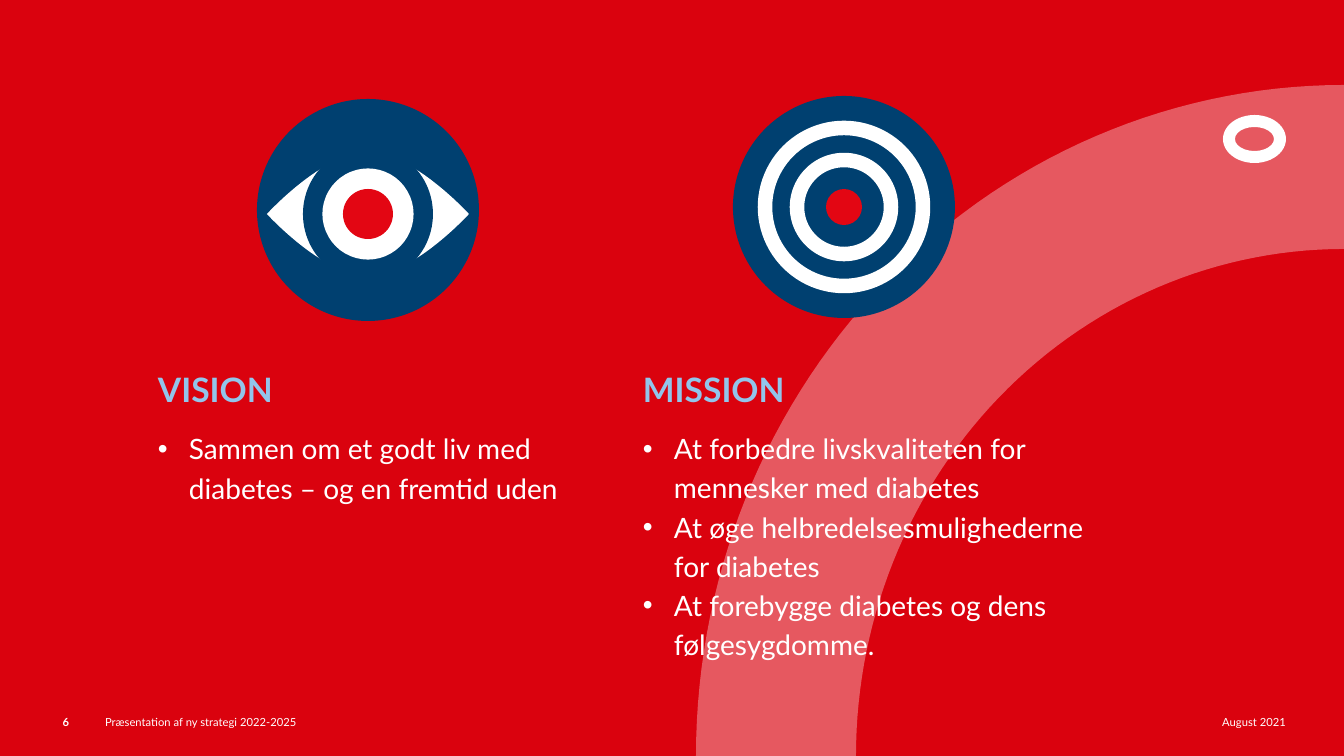
from dataclasses import dataclass
from math import cos, pi, sin

from lxml import etree
from pptx import Presentation
from pptx.dml.color import RGBColor
from pptx.enum.shapes import MSO_SHAPE
from pptx.enum.text import MSO_ANCHOR, PP_ALIGN
from pptx.oxml.ns import qn
from pptx.util import Emu, Pt

OVAL, DONUT = MSO_SHAPE.OVAL, MSO_SHAPE.DONUT
LEFT, RIGHT = PP_ALIGN.LEFT, PP_ALIGN.RIGHT
TOP = MSO_ANCHOR.TOP

EMU_PER_PX = 12192000 / 1344
WIDTH, HEIGHT = 1344, 756
FONT = "Lato"
RED, NAVY, WHITE = "DA020E", "004070", "FFFFFF"
PUPIL, SKY = "E30613", "92C5EB"
BULLET_INDENT = 31


@dataclass
class Disc:
    x: int
    y: int
    rx: int
    ry: int
    fill: str | None = None
    line: str | None = None
    weight: float = 0


@dataclass
class Column:
    x: int
    y: int
    width: int
    height: int
    title: str
    points: list[str]


@dataclass
class Footer:
    x: int
    width: int
    text: str
    align: int = LEFT
    bold: bool = False


def px(length: float) -> Emu:
    return Emu(round(length * EMU_PER_PX))


def rgb(colour: str) -> RGBColor:
    return RGBColor.from_string(colour)


def paint(shape, fill: str | None, line: str | None = None, weight: float = 0) -> None:
    shape.shadow.inherit = False
    if fill:
        shape.fill.solid()
        shape.fill.fore_color.rgb = rgb(fill)
    else:
        shape.fill.background()
    if line:
        shape.line.color.rgb = rgb(line)
        shape.line.width = Pt(weight)
    else:
        shape.line.fill.background()


def draw_disc(slide, disc: Disc) -> None:
    shape = slide.shapes.add_shape(OVAL, px(disc.x - disc.rx), px(disc.y - disc.ry),
                                   px(2 * disc.rx), px(2 * disc.ry))
    paint(shape, disc.fill, disc.line, disc.weight)


def draw_outline(slide, points: list[tuple[float, float]], fill: str):
    start, *rest = [(px(x), px(y)) for x, y in points]
    builder = slide.shapes.build_freeform(*start)
    builder.add_line_segments(rest, close=True)
    shape = builder.convert_to_shape()
    paint(shape, fill)
    return shape


def quarter_arc(rx: int, ry: int, steps: int = 60) -> list[tuple[float, float]]:
    """Arc around the bottom right corner, from the bottom edge to the right edge."""
    angles = [pi / 2 * i / steps for i in range(steps + 1)]
    return [(WIDTH - rx * cos(a), HEIGHT - ry * sin(a)) for a in angles]


def almond(x: int, y: int, rx: int, ry: int, steps: int = 24) -> list[tuple[float, float]]:
    """Eye outline: round at top and bottom, pointed at the sides."""
    pull = 0.44 * rx
    quarter = []
    for i in range(steps + 1):
        t = i / steps
        side = 3 * (1 - t) ** 2 * t * pull + (3 * (1 - t) * t ** 2 + t ** 3) * rx
        rise = ((1 - t) ** 3 + 3 * (1 - t) ** 2 * t) * ry
        quarter.append((side, rise))
    half = [(-dx, dy) for dx, dy in reversed(quarter)] + quarter[1:]
    return ([(x + dx, y - dy) for dx, dy in half]
            + [(x + dx, y + dy) for dx, dy in reversed(half[1:-1])])


def add_frame(slide, x: int, y: int, width: int, height: int,
              insets: tuple[int, int, int, int] = (0, 0, 0, 0)):
    frame = slide.shapes.add_textbox(px(x), px(y), px(width), px(height)).text_frame
    left, top, right, bottom = map(px, insets)
    settings = {"word_wrap": True, "vertical_anchor": TOP, "margin_left": left,
                "margin_top": top, "margin_right": right, "margin_bottom": bottom}
    for key, value in settings.items():
        setattr(frame, key, value)
    return frame


def write(paragraph, text: str, size: int, colour: str, bold: bool = False, **layout) -> None:
    run = paragraph.add_run()
    run.text = text
    for key, value in {"name": FONT, "size": Pt(size), "bold": bold}.items():
        setattr(run.font, key, value)
    run.font.color.rgb = rgb(colour)
    for key, value in layout.items():
        setattr(paragraph, key, value)


def add_bullet(paragraph) -> None:
    properties = paragraph._p.get_or_add_pPr()
    properties.set("marL", str(px(BULLET_INDENT)))
    properties.set("indent", str(-px(BULLET_INDENT)))
    etree.SubElement(properties, qn("a:buFont")).set("typeface", "Arial")
    etree.SubElement(properties, qn("a:buChar")).set("char", "•")


def draw_column(slide, column: Column) -> None:
    frame = add_frame(slide, column.x, column.y, column.width, column.height, (20, 119, 20, 20))
    write(frame.paragraphs[0], column.title, 24, SKY, True, space_after=Pt(12))
    for point in column.points:
        paragraph = frame.add_paragraph()
        write(paragraph, point, 20, WHITE, line_spacing=Pt(28))
        add_bullet(paragraph)


EYE_BACK = Disc(368, 210, 111, 111, NAVY)
EYE_PARTS = [
    Disc(368, 214, 65, 67, NAVY),
    Disc(368, 214, 39, 39, WHITE, WHITE, 9.42),
    Disc(368, 214, 25, 25, PUPIL),
]
TARGET = [
    Disc(844, 207, 111, 111, NAVY),
    Disc(844, 207, 79, 79, None, WHITE, 10.38),
    Disc(844, 207, 47, 47, None, WHITE, 10.38),
    Disc(844, 207, 18, 18, PUPIL),
]
COLUMNS = [
    Column(138, 252, 465, 354, "VISION",
           ["Sammen om et godt liv med diabetes – og en fremtid uden"]),
    Column(623, 250, 484, 429, "MISSION",
           ["At forbedre livskvaliteten for mennesker med diabetes",
            "At øge helbredelsesmulighederne for diabetes",
            "At forebygge diabetes og dens følgesygdomme."]),
]
FOOTERS = [
    Footer(0, 69, "6", RIGHT, True),
    Footer(105, 568, "Præsentation af ny strategi 2022-2025"),
    Footer(1191, 95, "August 2021", RIGHT),
]


def main() -> None:
    deck = Presentation()
    deck.slide_width, deck.slide_height = px(WIDTH), px(HEIGHT)
    slide = deck.slides.add_slide(deck.slide_layouts[6])
    slide.background.fill.solid()
    slide.background.fill.fore_color.rgb = rgb(RED)

    # Translucent band in the corner and plain emblem
    band = draw_outline(slide, quarter_arc(648, 671) + quarter_arc(488, 507)[::-1], WHITE)
    tint = band.fill._xPr.find(qn("a:solidFill"))[0]
    etree.SubElement(tint, qn("a:alpha")).set("val", "34000")
    emblem = slide.shapes.add_shape(DONUT, px(1223), px(115), px(63), px(48))
    paint(emblem, WHITE)

    # Footer line
    for footer in FOOTERS:
        frame = add_frame(slide, footer.x, 715, footer.width, 24)
        write(frame.paragraphs[0], footer.text, 8, WHITE, footer.bold, alignment=footer.align)

    # Vision and mission texts
    for column in COLUMNS:
        draw_column(slide, column)

    # Eye and target icons
    draw_disc(slide, EYE_BACK)
    draw_outline(slide, almond(368, 214, 101, 62), WHITE)
    for disc in EYE_PARTS + TARGET:
        draw_disc(slide, disc)

    deck.save("out.pptx")


if __name__ == "__main__":
    main()
